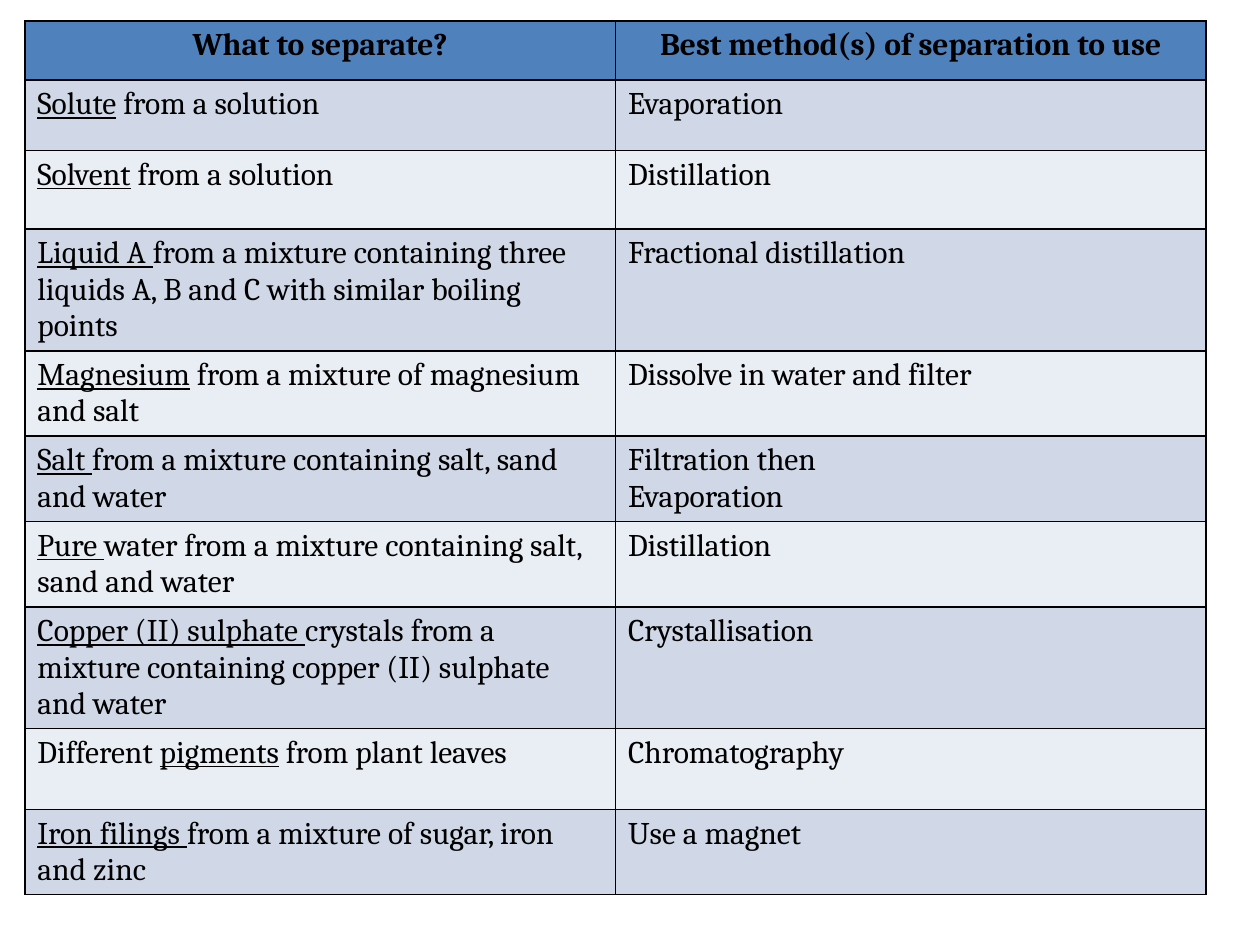
import dataclasses

import pptx
import pptx.dml.color
import pptx.enum.text
import pptx.oxml
import pptx.oxml.ns
import pptx.util

Pt = pptx.util.Pt


@dataclasses.dataclass
class Theme:
    font: str = "Cambria"
    size: float = 18
    ink: str = "000000"
    head: str = "4F81BD"
    bands: tuple = ("D0D8E8", "E9EDF4")
    line: float = 1


def color(code):
    return pptx.dml.color.RGBColor.from_string(code)


def write(frame, text, *, font, size, ink, bold=False, align=None):
    """Fill a text frame; each line is a paragraph, _marks_ underline."""
    for n, line in enumerate(text.split("\n")):
        para = frame.add_paragraph() if n else frame.paragraphs[0]
        para.alignment = align
        for k, part in enumerate(line.split("_")):
            if not part:
                continue
            run = para.add_run()
            run.text = part
            run.font.name = font
            run.font.size = Pt(size)
            run.font.color.rgb = color(ink)
            run.font.bold = bold
            run.font.underline = k % 2 == 1


class Deck:
    def __init__(self, theme, width, height):
        self.theme = theme
        self.file = pptx.Presentation()
        self.file.slide_width = Pt(width)
        self.file.slide_height = Pt(height)
        self.slide = self.file.slides.add_slide(self.file.slide_layouts[6])

    def border(self, cell):
        props = cell._tc.get_or_add_tcPr()
        for side in "LRTB":
            props.append(pptx.oxml.parse_xml(
                f'<a:ln{side} {pptx.oxml.ns.nsdecls("a")} '
                f'w="{Pt(self.theme.line)}"><a:solidFill>'
                f'<a:srgbClr val="{self.theme.ink}"/>'
                f'</a:solidFill></a:ln{side}>'))

    def cell(self, cell, text, fill, **form):
        theme = self.theme
        self.border(cell)
        cell.fill.solid()
        cell.fill.fore_color.rgb = color(fill)
        write(cell.text_frame, text, font=theme.font, size=theme.size,
              ink=theme.ink, **form)

    def table(self, rows, left, top, width, height, steps):
        theme = self.theme
        frame = self.slide.shapes.add_table(
            len(rows), len(rows[0]), Pt(left), Pt(top), Pt(width), Pt(height))
        grid = frame.table
        for r, (texts, step) in enumerate(zip(rows, steps)):
            grid.rows[r].height = Pt(step)
            fill = theme.bands[(r - 1) % 2] if r else theme.head
            align = None if r else pptx.enum.text.PP_ALIGN.CENTER
            for c, text in enumerate(texts):
                self.cell(grid.cell(r, c), text, fill,
                          bold=r == 0, align=align)
        frame.height = Pt(height)


# Wording: what to separate, and how
ROWS = [
    ("What to separate?", "Best method(s) of separation to use"),
    ("_Solute_ from a solution", "Evaporation"),
    ("_Solvent_ from a solution", "Distillation"),
    ("_Liquid A _from a mixture containing three liquids A, B and C "
     "with similar boiling points", "Fractional distillation"),
    ("_Magnesium_ from a mixture of magnesium and salt",
     "Dissolve in water and filter"),
    ("_Salt _from a mixture containing salt, sand and water",
     "Filtration then\nEvaporation"),
    ("_Pure _water from a mixture containing salt, sand and water",
     "Distillation"),
    ("_Copper (II) sulphate _crystals from a mixture containing "
     "copper (II) sulphate and water", "Crystallisation"),
    ("Different _pigments_ from plant leaves", "Chromatography"),
    ("_Iron filings _from a mixture of sugar, iron and zinc",
     "Use a magnet"),
]
STEPS = [33.8, 40.3, 44.9, 50.4, 47.5, 47.5, 47.5, 59.8, 46.1, 38.9]


def main():
    deck = Deck(Theme(), 720, 540)
    # Table of separation methods
    deck.table(ROWS, 14.2, 12, 675, 510.5, STEPS)
    deck.file.save("out.pptx")


if __name__ == "__main__":
    main()
